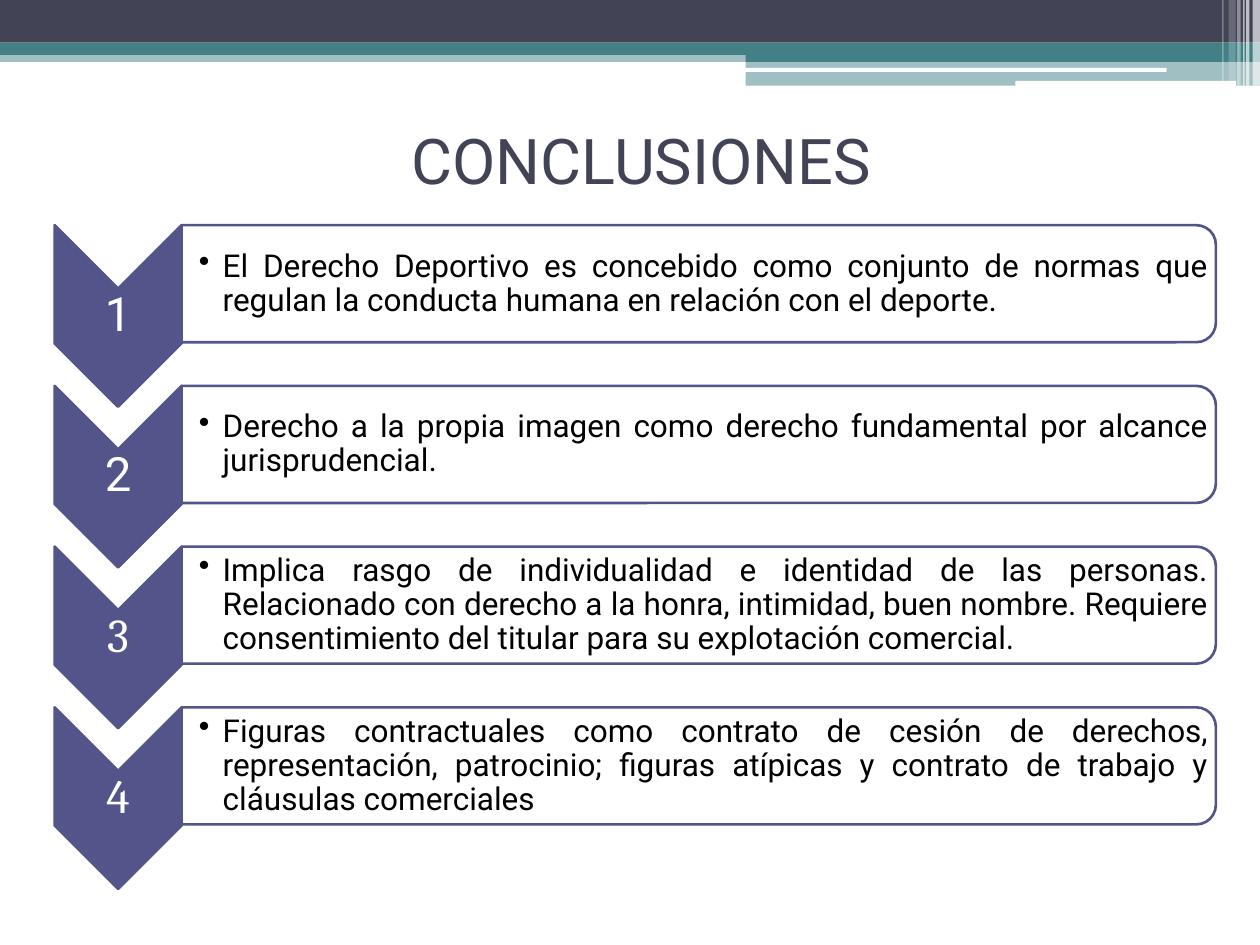
import lxml.etree
import pptx
import pptx.dml.color
import pptx.enum.shapes
import pptx.enum.text
import pptx.oxml.ns
import pptx.util

Cm = pptx.util.Cm
Pt = pptx.util.Pt
RGBColor = pptx.dml.color.RGBColor
SHAPE = pptx.enum.shapes.MSO_SHAPE
ALIGN = pptx.enum.text.PP_ALIGN
MIDDLE = pptx.enum.text.MSO_ANCHOR.MIDDLE
qn = pptx.oxml.ns.qn

SLATE = RGBColor(0x42, 0x44, 0x56)
TEAL = RGBColor(0x43, 0x80, 0x86)
VIOLET = RGBColor(0x53, 0x54, 0x8A)
WHITE = RGBColor(0xFF, 0xFF, 0xFF)
BLACK = RGBColor(0, 0, 0)

PAGE_WIDTH, PAGE_HEIGHT = 25.4, 19.05
ROW_PITCH = 3.24

# Number font, then the spans of the sentence with their fonts
CONCLUSIONS = [
    ("Roboto", [("El Derecho Deportivo es concebido como conjunto de normas que "
                 "regulan la conducta humana en relación con el deporte.", "Roboto")]),
    ("Roboto", [("Derecho a la propia imagen como derecho fundamental por alcance "
                 "jurisprudencial.", "Roboto")]),
    ("Cambria", [("Implica rasgo de individualidad e identidad de las personas. "
                  "Relacionado con derecho a la honra, intimidad, buen nombre. Requiere "
                  "consentimiento del titular para su explotación comercial", "Roboto"),
                 (".", "Cambria")]),
    ("Cambria", [("Figuras contractuales como contrato de cesión de derechos, "
                  "representación, patrocinio; figuras atípicas y contrato de trabajo y "
                  "cláusulas comerciales", "Roboto")]),
]


def apply_format(target, values):
    for name, value in values.items():
        setattr(target, name, value)


def add_filled(page, kind, box, color, opacity=100, outline=None):
    """Add a preset shape; box is left, top, width, height in centimetres."""
    shape = page.shapes.add_shape(kind, *map(Cm, box))
    shape.shadow.inherit = False
    shape.fill.solid()
    shape.fill.fore_color.rgb = color
    if opacity < 100:
        color_node = shape._element.spPr.find(qn("a:solidFill"))[0]
        lxml.etree.SubElement(color_node, qn("a:alpha"), val=str(opacity * 1000))
    if outline is None:
        shape.line.fill.background()
    else:
        shape.line.color.rgb = outline
        shape.line.width = Pt(1.5)
    return shape


def add_turned(page, kind, box, color, opacity=100):
    """Add a shape turned by 90 degrees that covers the given box."""
    left, top, width, height = box
    shift = (width - height) / 2
    unturned = (left + shift, top - shift, height, width)
    shape = add_filled(page, kind, unturned, color, opacity, VIOLET)
    shape.rotation = 90


def write_spans(frame, spans, size, color, frame_format, para_format):
    apply_format(frame, {"word_wrap": True, "vertical_anchor": MIDDLE, **frame_format})
    para = frame.paragraphs[0]
    apply_format(para, para_format)
    for text, font in spans:
        span = para.add_run()
        span.text = text
        apply_format(span.font, {"name": font, "size": Pt(size)})
        span.font.color.rgb = color
    return para


def add_bullet(para, indent):
    properties = para._p.get_or_add_pPr()
    properties.set("marL", str(Cm(indent)))
    properties.set("indent", str(-Cm(indent)))
    lxml.etree.SubElement(properties, qn("a:buChar"), char="•")


def margins(left, others):
    values = dict.fromkeys(["margin_right", "margin_top", "margin_bottom"], Cm(others))
    return {"margin_left": Cm(left), **values}


def add_header(page, box):
    """Draw the coloured bands, the white rules and the stripes at the right end."""
    left, top, width, height = box
    right = left + width
    half = 15.03  # where the lower bands begin
    bands = [
        (0, 1.02, 0.23, TEAL, 50),
        (0, 0, 0.86, SLATE, 100),
        (0, 0.86, 0.25, TEAL, 100),
        (half, 0.99, 0.26, TEAL, 100),
        (half, 1.23, 0.5, TEAL, 50),
    ]
    for start, drop, depth, color, opacity in bands:
        add_filled(page, SHAPE.RECTANGLE,
                   (left + start, top + drop, width - start, depth), color, opacity)
    for start, drop, length, depth in [(15.01, 1.37, 8.51, 0.08), (20.47, 1.63, 4.45, 0.1)]:
        add_filled(page, SHAPE.ROUNDED_RECTANGLE,
                   (left + start, top + drop, length, depth), WHITE)
    stripes = [  # distance from the right edge, width, height, opacity
        (0.15, 0.15, height, 65),
        (0.28, 0.07, height, 65),
        (0.34, 0.03, height, 60),
        (0.46, 0.07, height, 40),
        (0.63, 0.14, 1.63, 20),
        (0.76, 0.03, 1.63, 30),
    ]
    for distance, thickness, depth, opacity in stripes:
        add_filled(page, SHAPE.RECTANGLE,
                   (right - distance, top, thickness, depth), WHITE, opacity)


def add_title(page, box):
    title = page.shapes.title
    apply_format(title, dict(zip(("left", "top", "width", "height"), map(Cm, box))))
    write_spans(title.text_frame, [("CONCLUSIONES", "Roboto")], 36, SLATE,
                {}, {"alignment": ALIGN.CENTER})


def add_conclusion(page, box, number, number_font, spans):
    """Draw one row: a numbered chevron pointing down and its framed sentence."""
    left, top, width, height = box
    arrow_width, bar_height = 2.56, 2.36
    bar_left, bar_width = left + arrow_width, width - arrow_width
    add_turned(page, SHAPE.CHEVRON, (left, top, arrow_width, height), VIOLET)
    label = page.shapes.add_textbox(
        *map(Cm, (left, top + 1.28, arrow_width, 1.09)))
    write_spans(label.text_frame, [(str(number), number_font)], 27, WHITE,
                margins(0.05, 0.05), {"alignment": ALIGN.CENTER, "line_spacing": 0.9})

    add_turned(page, SHAPE.ROUND_2_SAME_RECTANGLE,
               (bar_left, top, bar_width, bar_height), WHITE, 90)
    sentence = page.shapes.add_textbox(
        *map(Cm, (bar_left, top + 0.12, bar_width - 0.12, bar_height - 0.23)))
    para = write_spans(sentence.text_frame, spans, 18, BLACK, margins(0.35, 0.03),
                       {"alignment": ALIGN.JUSTIFY, "line_spacing": 0.9})
    add_bullet(para, 0.48)


def main():
    deck = pptx.Presentation()
    apply_format(deck, {"slide_width": Cm(PAGE_WIDTH), "slide_height": Cm(PAGE_HEIGHT)})
    page = deck.slides.add_slide(deck.slide_layouts.get_by_name("Title Only"))
    add_header(page, (0, 0, PAGE_WIDTH, 1.73))
    add_title(page, (1.5, 1.73, 22.86, 2.97))
    for index, (number_font, spans) in enumerate(CONCLUSIONS):
        row = (1.1, 4.54 + index * ROW_PITCH, 23.41, 3.66)
        add_conclusion(page, row, index + 1, number_font, spans)
    deck.save("out.pptx")


if __name__ == "__main__":
    main()
